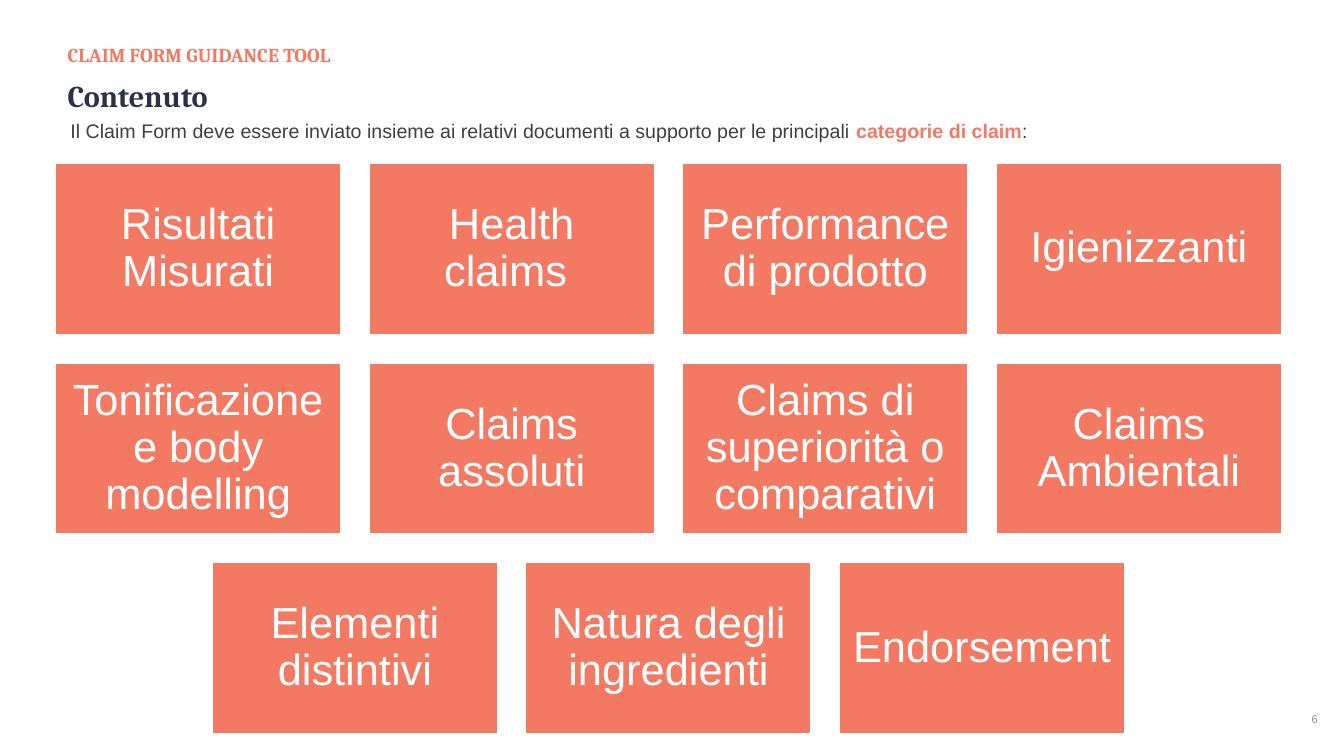
from dataclasses import dataclass

from pptx import Presentation
from pptx.dml.color import RGBColor
from pptx.enum.shapes import MSO_SHAPE
from pptx.enum.text import MSO_ANCHOR, PP_ALIGN
from pptx.slide import Slide
from pptx.text.text import TextFrame
from pptx.util import Inches, Pt

CORAL = RGBColor(0xF3, 0x79, 0x63)
NAVY = RGBColor(0x28, 0x33, 0x4A)
CHARCOAL = RGBColor(0x40, 0x40, 0x41)
GREY = RGBColor(0x8C, 0x8C, 0x8C)
WHITE = RGBColor(0xFF, 0xFF, 0xFF)

CATEGORY_ROWS = (
    ("Risultati Misurati", "Health claims ", "Performance di prodotto", "Igienizzanti"),
    ("Tonificazione e body modelling", "Claims assoluti",
     "Claims di superiorità o comparativi", "Claims Ambientali"),
    ("Elementi distintivi", "Natura degli ingredienti", "Endorsement"),
)
TILE_WIDTH, TILE_HEIGHT, TILE_INSET = 2.83, 1.7, 0.13
COLUMN_STEP, ROW_STEP = 3.11, 1.98
GRID_CENTER, GRID_TOP = 6.63, 1.62


@dataclass(frozen=True)
class Span:
    text: str
    size: float
    color: RGBColor
    font: str = "Arial"
    bold: bool = False


@dataclass(frozen=True)
class Label:
    left: float
    top: float
    width: float
    height: float
    spans: tuple[Span, ...]
    inset_x: float = 0.1
    inset_y: float = 0.05
    align: PP_ALIGN = PP_ALIGN.LEFT
    anchor: MSO_ANCHOR = MSO_ANCHOR.TOP
    line_spacing: float = 1.0


LABELS = (
    Label(12.67, 6.99, 0.5, 0.29, (Span("6", 8, GREY),),
          align=PP_ALIGN.RIGHT, anchor=MSO_ANCHOR.MIDDLE),
    Label(0.67, 0.73, 12, 0.57, (Span("Contenuto", 21.6, NAVY, "Cambria", True),),
          inset_x=0, inset_y=0, line_spacing=1.1),
    Label(0.67, 0.38, 12, 0.33,
          (Span("CLAIM FORM GUIDANCE TOOL", 14, CORAL, "Cambria", True),), inset_x=0),
    Label(0.6, 1.13, 9.89, 0.34, (
        Span("Il Claim Form deve essere inviato insieme ai relativi documenti "
             "a supporto per le principali ", 14, CHARCOAL),
        Span("categorie di claim", 14, CORAL, bold=True),
        Span(":", 14, CHARCOAL),
    )),
)


def fill_text(frame: TextFrame, label: Label) -> None:
    frame.word_wrap = True
    frame.vertical_anchor = label.anchor
    frame.margin_left = frame.margin_right = Inches(label.inset_x)
    frame.margin_top = frame.margin_bottom = Inches(label.inset_y)
    paragraph = frame.paragraphs[0]
    paragraph.alignment = label.align
    paragraph.line_spacing = label.line_spacing
    for span in label.spans:
        run = paragraph.add_run()
        run.text = span.text
        run.font.name = span.font
        run.font.size = Pt(span.size)
        run.font.bold = span.bold
        run.font.color.rgb = span.color


def add_label(slide: Slide, label: Label) -> None:
    box = slide.shapes.add_textbox(Inches(label.left), Inches(label.top),
                                   Inches(label.width), Inches(label.height))
    fill_text(box.text_frame, label)


def add_tile(slide: Slide, category: str, left: float, top: float) -> None:
    label = Label(left, top, TILE_WIDTH, TILE_HEIGHT, (Span(category, 31, WHITE),),
                  TILE_INSET, TILE_INSET, PP_ALIGN.CENTER, MSO_ANCHOR.MIDDLE, 0.9)
    tile = slide.shapes.add_shape(MSO_SHAPE.RECTANGLE, Inches(left), Inches(top),
                                  Inches(TILE_WIDTH), Inches(TILE_HEIGHT))
    tile.shadow.inherit = False
    tile.fill.solid()
    tile.fill.fore_color.rgb = CORAL
    tile.line.color.rgb = WHITE
    tile.line.width = Pt(1)
    fill_text(tile.text_frame, label)


def add_category_grid(slide: Slide) -> None:
    """Place the rows of tiles, each centred on the grid."""
    for row, categories in enumerate(CATEGORY_ROWS):
        row_width = (len(categories) - 1) * COLUMN_STEP + TILE_WIDTH
        row_left = GRID_CENTER - row_width / 2
        for column, category in enumerate(categories):
            add_tile(slide, category, row_left + column * COLUMN_STEP,
                     GRID_TOP + row * ROW_STEP)


def main() -> None:
    deck = Presentation()
    deck.slide_width, deck.slide_height = Inches(13.33), Inches(7.5)
    slide = deck.slides.add_slide(deck.slide_layouts[6])
    for label in LABELS:
        add_label(slide, label)
    add_category_grid(slide)
    deck.save("out.pptx")


if __name__ == "__main__":
    main()
